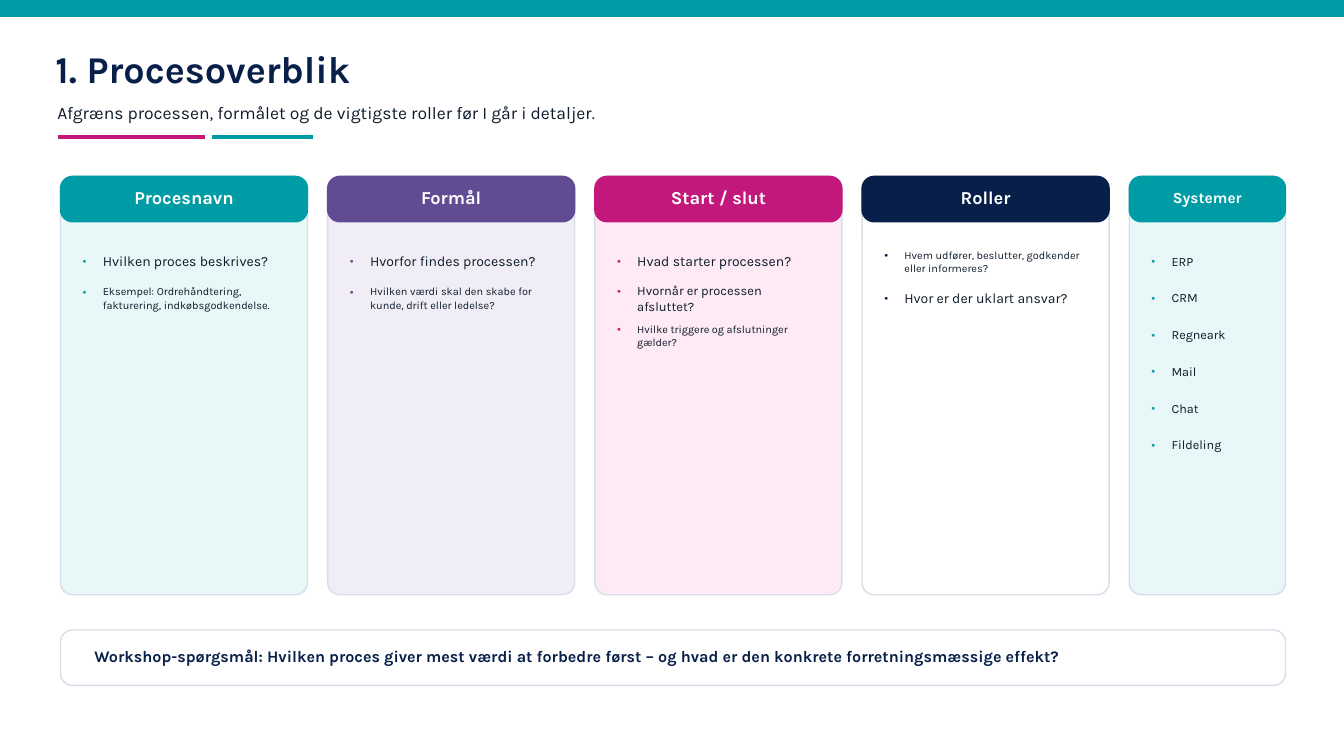
"""Build the process overview slide with five topic cards and a workshop question."""
from lxml import etree
from pptx import Presentation
from pptx import util as u
from pptx.dml.color import RGBColor
from pptx.enum import shapes, text
from pptx.oxml import ns

TEAL = RGBColor(0x00, 0x9C, 0xA6)
PURPLE = RGBColor(0x61, 0x4C, 0x93)
PINK = RGBColor(0xC2, 0x18, 0x7B)
NAVY = RGBColor(0x07, 0x1F, 0x49)
INK = RGBColor(0x0D, 0x1B, 0x2A)
WHITE = RGBColor(0xFF, 0xFF, 0xFF)
BORDER = RGBColor(0xD8, 0xDE, 0xE8)
PALE_TEAL = RGBColor(0xE8, 0xF7, 0xF8)
PALE_PURPLE = RGBColor(0xF1, 0xED, 0xF7)
PALE_PINK = RGBColor(0xFD, 0xEA, 0xF5)

FONT = "Karla"
LINE_HEIGHT = 1.17
PITCH = 0.36
FIRST_CENTER = 2.59
TOP = 1.75
GAP = 0.2
RADIUS = 0.12


def write(sp, content, size=10, color=INK, bold=False, align=text.PP_ALIGN.LEFT,
          anchor=text.MSO_ANCHOR.MIDDLE, left=0, bottom=0, bullet=None, before=0, first=True):
    tf = sp.text_frame
    tf.word_wrap = True
    tf.auto_size = text.MSO_AUTO_SIZE.NONE
    tf.vertical_anchor = anchor
    tf.margin_left, tf.margin_bottom = u.Inches(left), u.Inches(bottom)
    tf.margin_top = tf.margin_right = 0
    p = tf.paragraphs[0] if first else tf.add_paragraph()
    if bullet is not None:
        pPr = p._p.get_or_add_pPr()
        pPr.set("marL", str(u.Inches(0.2)))
        pPr.set("indent", str(-u.Inches(0.2)))
        buClr = etree.SubElement(pPr, ns.qn("a:buClr"))
        etree.SubElement(buClr, ns.qn("a:srgbClr"), val=str(bullet))
        etree.SubElement(pPr, ns.qn("a:buSzPct"), val=str(round(10 / size * 100) * 1000))
        etree.SubElement(pPr, ns.qn("a:buFont"), typeface=FONT)
        etree.SubElement(pPr, ns.qn("a:buChar"), char="•")
    p.alignment = align
    p.line_spacing = 1.0
    p.space_before, p.space_after = u.Pt(round(before, 2)), u.Pt(0)
    r = p.add_run()
    r.text = content
    r.font.name, r.font.size, r.font.bold = FONT, u.Pt(size), bold
    r.font.color.rgb = color


def panel(left, top, width, height, fill, line, kind=shapes.MSO_SHAPE.ROUNDED_RECTANGLE):
    sp = s.shapes.add_shape(kind, u.Inches(left), u.Inches(top), u.Inches(width), u.Inches(height))
    sp.shadow.inherit = False
    sp.fill.solid()
    sp.fill.fore_color.rgb = fill
    sp.line.color.rgb = line
    sp.line.width = u.Pt(1)
    if kind == shapes.MSO_SHAPE.ROUNDED_RECTANGLE:
        sp.adjustments[0] = RADIUS / min(width, height)
    return sp


prs = Presentation()
prs.slide_width, prs.slide_height = u.Inches(13.33), u.Inches(7.5)
s = prs.slides.add_slide(prs.slide_layouts.get_by_name("Comparison"))
title = s.shapes.title
bodies = [ph for ph in s.placeholders if ph.placeholder_format.idx in (1, 2, 3, 4)]

panel(0, 0, 13.33, 0.16, TEAL, TEAL, shapes.MSO_SHAPE.RECTANGLE)

title.left, title.top = u.Inches(0.55), u.Inches(0.45)
title.width, title.height = u.Inches(8.8), u.Inches(0.45)
write(title, "1. Procesoverblik", size=27, color=NAVY, bold=True)

subtitle = s.shapes.add_textbox(u.Inches(0.57), u.Inches(0.95), u.Inches(9.8), u.Inches(0.33))
write(subtitle, "Afgræns processen, formålet og de vigtigste roller før I går i detaljer.", size=12.5)

for start, end, color in [(0.58, 2.03, PINK), (2.1, 3.1, TEAL)]:
    rule = s.shapes.add_connector(shapes.MSO_CONNECTOR.STRAIGHT, u.Inches(start), u.Inches(1.36),
                                  u.Inches(end), u.Inches(1.36))
    rule.line.color.rgb = color
    rule.line.width = u.Pt(3)
    etree.SubElement(rule.element.spPr, ns.qn("a:effectLst"))

cards = [
    ("Procesnavn", 13, 2.45, TEAL, PALE_TEAL, [
        ("Hvilken proces beskrives?", 10, 1),
        ("Eksempel: Ordrehåndtering, fakturering, indkøbsgodkendelse.", 7.8, 2)]),
    ("Formål", 13, 2.45, PURPLE, PALE_PURPLE, [
        ("Hvorfor findes processen?", 10, 1),
        ("Hvilken værdi skal den skabe for kunde, drift eller ledelse?", 7.8, 2)]),
    ("Start / slut", 13, 2.45, PINK, PALE_PINK, [
        ("Hvad starter processen?", 10, 1),
        ("Hvornår er processen afsluttet?", 9.2, 2),
        ("Hvilke triggere og afslutninger gælder?", 7.8, 2)]),
    ("Roller", 13, 2.45, NAVY, WHITE, [
        ("Hvem udfører, beslutter, godkender eller informeres?", 7.8, 2),
        ("Hvor er der uklart ansvar?", 10, 1)]),
    ("Systemer", 11, 1.55, TEAL, PALE_TEAL, [
        (name, 9, 1) for name in ("ERP", "CRM", "Regneark", "Mail", "Chat", "Fildeling")]),
]

left = 0.6
for heading, heading_size, width, accent, fill, items in cards:
    panel(left, TOP, width, 4.15, fill, BORDER)
    header = panel(left, TOP, width, 0.45, accent, accent)
    write(header, heading, size=heading_size, color=WHITE, bold=True,
          align=text.PP_ALIGN.CENTER, bottom=0.03)

    heights = [size * lines * LINE_HEIGHT for _, size, lines in items]
    if bodies:
        sp = bodies.pop(0)
        header.element.addnext(sp.element)
    else:
        sp = s.shapes.add_textbox(0, 0, 0, 0)
    sp.left, sp.top = u.Inches(left + 0.22), u.Inches(FIRST_CENTER) - u.Pt(heights[0] / 2)
    sp.width, sp.height = u.Inches(width - 0.42), u.Inches(PITCH * len(items))
    for i, (item, size, _) in enumerate(items):
        before = PITCH * 72 - (heights[i - 1] + heights[i]) / 2 if i else 0
        write(sp, item, size=size, anchor=text.MSO_ANCHOR.TOP, bullet=accent,
              before=before, first=i == 0)
    left += width + GAP

question = panel(0.6, 6.25, 12.15, 0.55, WHITE, BORDER)
write(question, "Workshop-spørgsmål: Hvilken proces giver mest værdi at forbedre først – "
      "og hvad er den konkrete forretningsmæssige effekt?",
      size=11.5, color=NAVY, bold=True, left=0.3, bottom=0.03)

prs.save("out.pptx")
